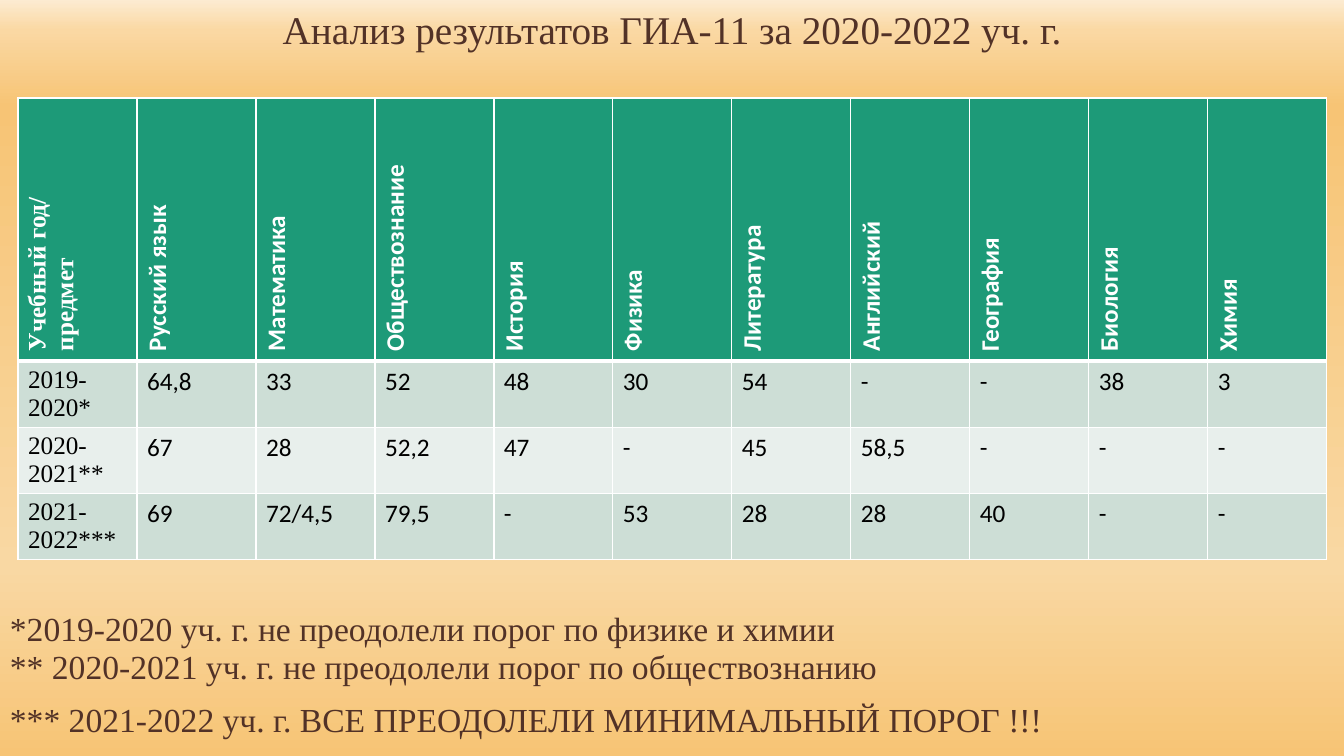
from dataclasses import dataclass

from lxml import etree
from pptx import Presentation, util as u
from pptx.dml.color import RGBColor
from pptx.enum import text as t
from pptx.oxml import ns, parse_xml

PX = 914400 / 100.8


@dataclass(frozen=True)
class Theme:
    serif: str = "Times New Roman"
    sans: str = "Calibri"
    ink: str = "523227"
    black: str = "000000"
    white: str = "FFFFFF"
    head: str = "1D9A78"
    bands: tuple = ("CDDED6", "E8EFEC")
    sky: tuple = ((0, "FCEBD1"), (4, "FAD8A3"), (14, "F7C475"),
                  (75, "F9D8A3"), (100, "F7C475"))
    title: int = 28
    note: int = 24
    cell: int = 18


@dataclass(frozen=True)
class Box:
    left: int
    top: int
    width: int
    height: int


@dataclass(frozen=True)
class Year:
    name: str
    marks: tuple


THEME = Theme()
TITLE = Box(0, 0, 1344, 50)
NOTES = Box(0, 606, 1344, 140)
GRID = Box(18, 98, 1309, 461)
ROW = 66
HEADS = ("Учебный год/ предмет", "Русский язык", "Математика",
         "Обществознание", "История", "Физика", "Литература",
         "Английский", "География", "Биология", "Химия")
YEARS = (
    Year("2019-2020*", ("64,8", "33", "52", "48", "30", "54", "-", "-", "38", "3")),
    Year("2020-2021**", ("67", "28", "52,2", "47", "-", "45", "58,5", "-", "-", "-")),
    Year("2021-2022***", ("69", "72/4,5", "79,5", "-", "53", "28", "28", "40", "-", "-")),
)
LINES = (
    "*2019-2020 уч. г. не преодолели порог по физике и химии\v"
    "** 2020-2021 уч. г. не преодолели порог по обществознанию",
    "*** 2021-2022 уч. г. ВСЕ ПРЕОДОЛЕЛИ МИНИМАЛЬНЫЙ ПОРОГ !!!",
)


def px(size: int) -> int:
    return round(size * PX)


def place(shape, box: Box) -> None:
    shape.left, shape.top = px(box.left), px(box.top)
    shape.width, shape.height = px(box.width), px(box.height)


def style(para, face: str, size: int, ink: str, bold: bool = False) -> None:
    font = para.font
    font.name, font.size, font.bold = face, u.Pt(size), bold
    font.color.rgb = RGBColor.from_string(ink)


def paint(slide) -> None:
    """Fill the background with a vertical gradient."""
    stops = "".join(f'<a:gs pos="{at * 1000}"><a:srgbClr val="{hue}"/></a:gs>'
                    for at, hue in THEME.sky)
    bg = parse_xml(
        f'<p:bg {ns.nsdecls("p", "a")}><p:bgPr><a:gradFill rotWithShape="1">'
        f'<a:gsLst>{stops}</a:gsLst><a:lin ang="5400000" scaled="0"/>'
        '</a:gradFill><a:effectLst/></p:bgPr></p:bg>')
    slide.element.cSld.insert(0, bg)


def border(cell, side: str, width: float) -> None:
    props = cell._tc.get_or_add_tcPr()
    line = etree.SubElement(props, ns.qn(f"a:ln{side}"), w=str(u.Pt(width)))
    fill = etree.SubElement(line, ns.qn("a:solidFill"))
    etree.SubElement(fill, ns.qn("a:srgbClr"), val=THEME.white)


def write(cell, words: str, face: str, fill: str, head: bool, under: bool) -> None:
    cell.text = words
    style(cell.text_frame.paragraphs[0], face, THEME.cell,
          THEME.white if head else THEME.black, head)
    for side in "LRTB":
        thick = (head and side == "B") or (under and side == "T")
        border(cell, side, 3 if thick else 1)
    cell.fill.solid()
    cell.fill.fore_color.rgb = RGBColor.from_string(fill)
    if head:
        cell.vertical_anchor = t.MSO_ANCHOR.MIDDLE
        cell._tc.get_or_add_tcPr().set("vert", "vert270")


def add_grid(slide) -> None:
    rows = [HEADS] + [(year.name, *year.marks) for year in YEARS]
    frame = slide.shapes.add_table(len(rows), len(HEADS), px(GRID.left),
                                   px(GRID.top), px(GRID.width), px(GRID.height))
    table = frame.table
    for col in table.columns:
        col.width = px(GRID.width // len(HEADS))
    for r, row in enumerate(rows):
        table.rows[r].height = px(ROW if r else GRID.height - ROW * len(YEARS))
        fill = THEME.bands[(r - 1) % 2] if r else THEME.head
        for c, words in enumerate(row):
            write(table.cell(r, c), words, THEME.sans if c else THEME.serif,
                  fill, r == 0, r == 1)


def add_title(slide) -> None:
    title = slide.shapes.title
    place(title, TITLE)
    frame = title.text_frame
    frame.text = "Анализ результатов ГИА-11 за 2020-2022 уч. г."
    frame.vertical_anchor = t.MSO_ANCHOR.TOP
    frame.auto_size = t.MSO_AUTO_SIZE.NONE
    para = frame.paragraphs[0]
    para.alignment = t.PP_ALIGN.CENTER
    style(para, THEME.serif, THEME.title, THEME.ink)


def add_notes(slide) -> None:
    box = slide.shapes.add_textbox(0, 0, 0, 0)
    place(box, NOTES)
    frame = box.text_frame
    frame.word_wrap = True
    for i, words in enumerate(LINES):
        para = frame.add_paragraph() if i else frame.paragraphs[0]
        para.text = words
        para.line_spacing = 0.95
        para.space_before = u.Pt(10 if i else 0)
        style(para, THEME.serif, THEME.note, THEME.ink)


def main() -> None:
    deck = Presentation()
    deck.slide_width, deck.slide_height = px(1344), px(756)
    slide = deck.slides.add_slide(deck.slide_layouts[5])
    paint(slide)
    # Heading, score table and footnotes
    add_title(slide)
    add_grid(slide)
    add_notes(slide)
    deck.save("out.pptx")


if __name__ == "__main__":
    main()
